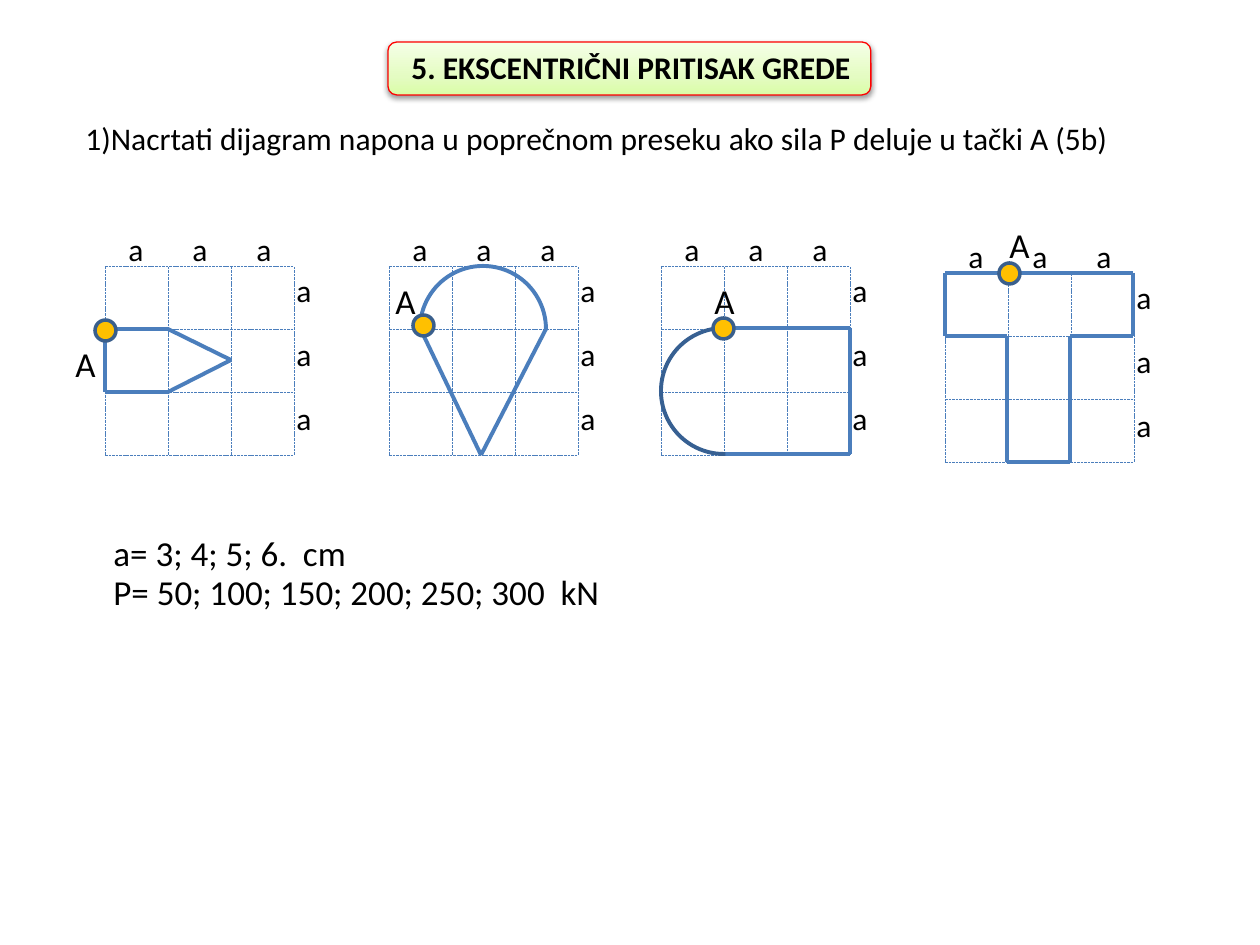
from copy import deepcopy
from itertools import pairwise

from lxml import etree
from pptx import Presentation
from pptx.dml.color import RGBColor
from pptx.enum.dml import MSO_LINE
from pptx.enum.shapes import MSO_CONNECTOR, MSO_SHAPE
from pptx.enum.text import MSO_AUTO_SIZE
from pptx.oxml.ns import qn
from pptx.util import Pt

PX = 7257
CELL = 63
LABEL_STEP = 64
STRAIGHT = MSO_CONNECTOR.STRAIGHT
ROUNDED = MSO_SHAPE.ROUNDED_RECTANGLE
ARC = MSO_SHAPE.ARC
OVAL = MSO_SHAPE.OVAL
FIT = MSO_AUTO_SIZE.SHAPE_TO_FIT_TEXT

COLORS = {
    "text": "000000",
    "line": "4B7EBC",
    "dark_arc": "376092",
    "dot": "FFC000",
    "dot_line": "3A5F8C",
    "title_line": "FF0000",
    "title_bottom": "DAFDA7",
    "title_middle": "E4FCC2",
    "title_top": "F5FFE7",
}
RGB = {name: RGBColor.from_string(value) for name, value in COLORS.items()}
GRID_LINE = {"width": Pt(0.5), "dash_style": MSO_LINE.SQUARE_DOT}
OUTLINE = {"width": Pt(2.25)}


def add_text(shapes, box, text, size=18, bold=False):
    shape = shapes.add_textbox(*(value * PX for value in box))
    frame = shape.text_frame
    for name, value in {"word_wrap": False, "auto_size": FIT}.items():
        setattr(frame, name, value)
    paragraph = frame.paragraphs[0]
    run = paragraph.add_run()
    run.text = text
    font_format = {"name": "Calibri", "size": Pt(size), "bold": bold}
    for name, value in font_format.items():
        setattr(run.font, name, value)
    run.font.color.rgb = RGB["text"]
    return paragraph


def add_line(shapes, start, end, line_format):
    connector = shapes.add_connector(STRAIGHT, *(value * PX for value in (*start, *end)))
    for name, value in line_format.items():
        setattr(connector.line, name, value)
    connector.line.color.rgb = RGB["line"]
    etree.SubElement(connector._element.spPr, qn("a:effectLst"))


presentation = Presentation()
presentation.slide_width = 1260 * PX
presentation.slide_height = 945 * PX
slide = presentation.slides.add_slide(presentation.slide_layouts[6])
shapes = slide.shapes

title = shapes.add_shape(ROUNDED, 388 * PX, 42 * PX, 483 * PX, 53 * PX)
title.fill.gradient()
title.fill.gradient_angle = 90
gradient_list = title._element.spPr.find(".//" + qn("a:gsLst"))
gradient_list.append(deepcopy(gradient_list[-1]))
title_stops = [(0, "title_bottom"), (0.35, "title_middle"), (1, "title_top")]
for stop, (position, color) in zip(title.fill.gradient_stops, title_stops):
    stop.position = position
    stop.color.rgb = RGB[color]
title.line.color.rgb = RGB["title_line"]
title.line.width = Pt(0.75)
title.shadow.inherit = False
effects = title._element.spPr.find(qn("a:effectLst"))
shadow = etree.SubElement(
    effects, qn("a:outerShdw"), blurRad="40000", dist="20000", dir="5400000", rotWithShape="0"
)
shadow_color = etree.SubElement(shadow, qn("a:srgbClr"), val="000000")
etree.SubElement(shadow_color, qn("a:alpha"), val="38000")

add_text(shapes, (399, 42, 469, 51), "5. EKSCENTRIČNI PRITISAK GREDE", bold=True)
question = add_text(
    shapes,
    (73, 113, 1076, 51),
    "1)Nacrtati dijagram napona u poprečnom preseku ako sila P deluje u tački A (5b)",
)
properties = question._p.get_or_add_pPr()
properties.set("marL", str(CELL * PX))
properties.set("indent", str(-CELL * PX))

for left, top in [(105, 266), (389, 266), (661, 266), (945, 273)]:
    grid = shapes.add_group_shape().shapes
    right, bottom = left + 3 * CELL, top + 3 * CELL
    for index in range(4):
        x, y = left + index * CELL, top + index * CELL
        add_line(grid, (left, y), (right, y), GRID_LINE)
        add_line(grid, (x, bottom), (x, top), GRID_LINE)
    for index in range(3):
        offset = index * LABEL_STEP
        add_text(grid, (left + 11 + offset, top - 42, 40, 51), "a")
        add_text(grid, (right - 10, top - 1 + offset, 40, 51), "a")

sections = [
    [(168, 329), (105, 329), (105, 392), (168, 392), (231, 360), (168, 329)],
    [(546, 329), (481, 455), (420, 328)],
    [(725, 328), (850, 328), (850, 454), (725, 454)],
    [(945, 273), (1133, 273), (1133, 336), (1070, 336), (1070, 462),
     (1007, 462), (1007, 336), (945, 336), (945, 273)],
]
for points in sections:
    for start, end in pairwise(points):
        add_line(shapes, start, end, OUTLINE)

arcs = [(420, 266, 0, 108.83, "line"), (661, 328, 270, 107.15, "dark_arc")]
for left, top, rotation, start_angle, color in arcs:
    arc = shapes.add_shape(ARC, left * PX, top * PX, 2 * CELL * PX, 2 * CELL * PX)
    arc.adjustments[0] = start_angle
    arc.adjustments[1] = 0
    arc.rotation = rotation
    arc.fill.background()
    arc.line.color.rgb = RGB[color]
    arc.line.width = Pt(2.25)
    arc.shadow.inherit = False

force_points = [
    ((95, 320), (63, 336)),
    ((413, 315), (383, 273)),
    ((713, 318), (702, 273)),
    ((999, 263), (997, 217)),
]
for (left, top), label_corner in force_points:
    dot = shapes.add_shape(OVAL, left * PX, top * PX, 21 * PX, 21 * PX)
    dot.fill.solid()
    dot.fill.fore_color.rgb = RGB["dot"]
    dot.line.color.rgb = RGB["dot_line"]
    dot.line.width = Pt(2)
    dot.shadow.inherit = False
    add_text(shapes, (*label_corner, 45, 55), "A", size=20)

add_text(shapes, (101, 525, 270, 55), "a= 3; 4; 5; 6.  cm", size=20)
add_text(shapes, (101, 564, 515, 55), "P= 50; 100; 150; 200; 250; 300  kN", size=20)

presentation.save("out.pptx")
